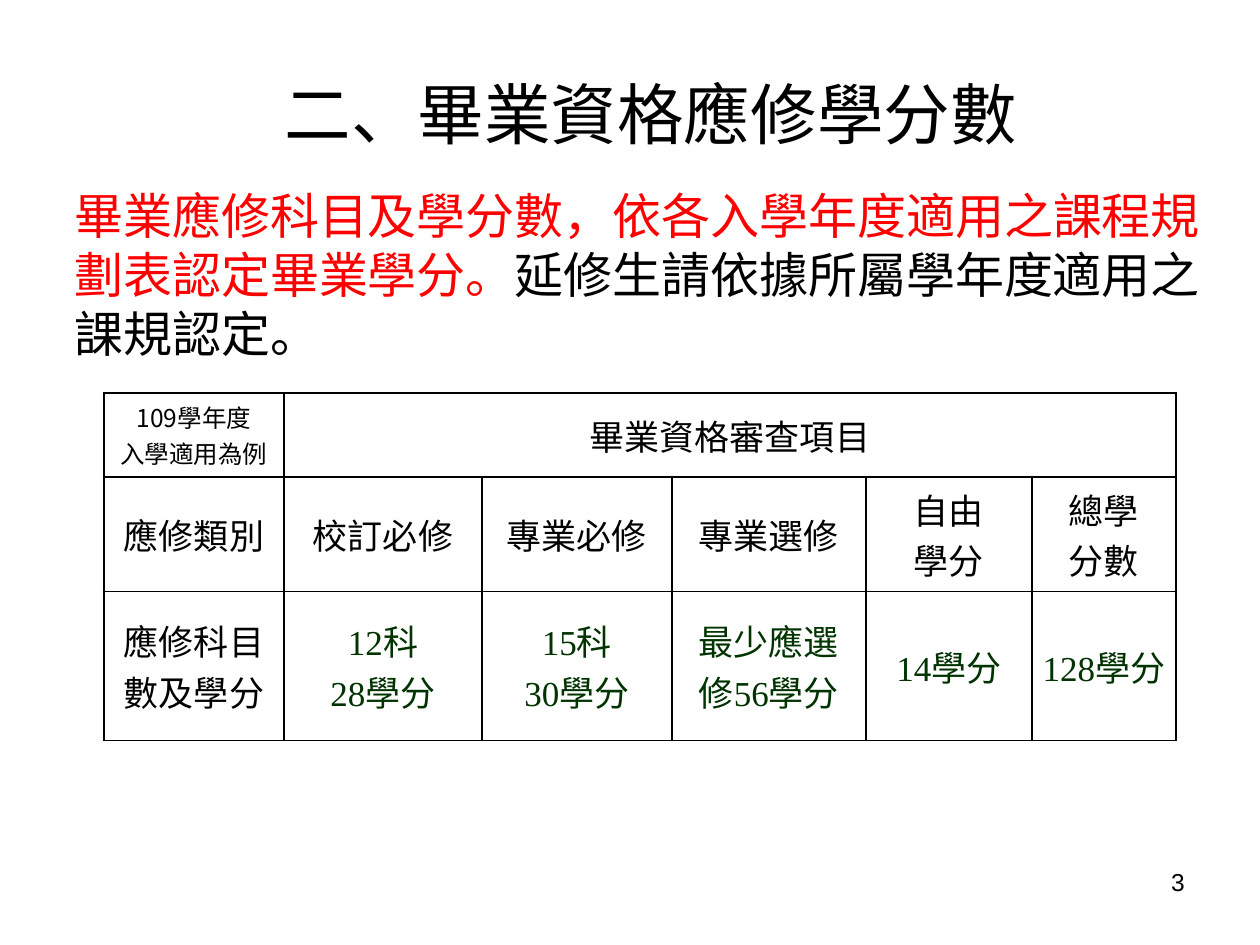
from lxml import etree
from pptx import Presentation
from pptx.dml.color import RGBColor
from pptx.enum.text import MSO_ANCHOR, PP_ALIGN
from pptx.oxml.ns import qn
from pptx.util import Pt

EMU_PER_PX = 914400 / 126
BLACK = RGBColor(0, 0, 0)
WHITE = RGBColor(255, 255, 255)
RED = RGBColor(255, 0, 0)
GREEN = RGBColor(0, 51, 0)
LEFT, CENTER, RIGHT = PP_ALIGN.LEFT, PP_ALIGN.CENTER, PP_ALIGN.RIGHT
TOP, MIDDLE = MSO_ANCHOR.TOP, MSO_ANCHOR.MIDDLE
CJK = "Noto Sans CJK SC"
TITLE_FONT = "Noto Sans CJK JP"
SERIF = "Times New Roman"
SANS = "Arial"

COLUMN_WIDTHS = [180, 198, 190, 194, 166, 144]
ROW_HEIGHTS = [84, 114, 149]
ROWS = [
    [["109學年度", "入學適用為例"], ["畢業資格審查項目"]],
    [["應修類別"], ["校訂必修"], ["專業必修"], ["專業選修"],
     ["自由", "學分"], ["總學", "分數"]],
    [["應修科目數及學分"], ["12科", "28學分"], ["15科", "30學分"],
     ["最少應選修56學分"], ["14學分"], ["128學分"]],
]
NOTE_LINES = [
    [("畢業應修科目及學分數，依各入學年度適用之課程規", RED)],
    [("劃表認定畢業學分。", RED), ("延修生請依據所屬學年度適用之", BLACK)],
    [("課規認定。", BLACK)],
]


def px(length):
    return round(length * EMU_PER_PX)


def place(shape, left, top, width, height):
    shape.left, shape.top = px(left), px(top)
    shape.width, shape.height = px(width), px(height)


def write(frame, lines, size, font, align, spacing=None):
    for index, spans in enumerate(lines):
        para = frame.add_paragraph() if index else frame.paragraphs[0]
        para.alignment = align
        para.space_before = Pt(0)
        if spacing:
            para.line_spacing = Pt(spacing)
        for text, color in spans:
            span = para.add_run()
            span.text = text
            span.font.size = Pt(size)
            span.font.name = font
            span.font.color.rgb = color
            east_asian = etree.SubElement(span.font._element, qn("a:ea"))
            east_asian.set("typeface", CJK if font in (SERIF, SANS) else font)


def add_title(page):
    title = page.shapes.title
    place(title, 84, 45, 1134, 110)
    frame = title.text_frame
    frame.word_wrap = True
    frame.vertical_anchor = MIDDLE
    frame.margin_top, frame.margin_bottom = px(16), px(6)
    write(frame, [[("二、畢業資格應修學分數", BLACK)]], 38, TITLE_FONT, CENTER, 55)


def add_text(page, area, lines, size, font, align, spacing=None, wrap=True, margin_top=6):
    box = page.shapes.add_textbox(0, 0, 0, 0)
    place(box, *area)
    frame = box.text_frame
    frame.word_wrap = wrap
    frame.margin_top = px(margin_top)
    write(frame, lines, size, font, align, spacing)


def set_borders(cell, widths):
    properties = cell._tc.get_or_add_tcPr()
    for index, (side, width) in enumerate(widths.items()):
        line = etree.Element(qn(f"a:ln{side}"), w=str(Pt(width)))
        fill = etree.SubElement(line, qn("a:solidFill"))
        etree.SubElement(fill, qn("a:srgbClr"), val=str(BLACK))
        properties.insert(index, line)


def add_credit_table(page):
    last_row, last_column = len(ROW_HEIGHTS) - 1, len(COLUMN_WIDTHS) - 1
    holder = page.shapes.add_table(
        last_row + 1, last_column + 1, px(104), px(393),
        px(sum(COLUMN_WIDTHS)), px(sum(ROW_HEIGHTS)))
    table = holder.table
    for column, width in zip(table.columns, COLUMN_WIDTHS):
        column.width = px(width)
    for row, height in zip(table.rows, ROW_HEIGHTS):
        row.height = px(height)
    table.cell(0, 1).merge(table.cell(0, last_column))

    for r in range(last_row + 1):
        for c in range(last_column + 1):
            cell = table.cell(r, c)
            cell.fill.solid()
            cell.fill.fore_color.rgb = WHITE
            set_borders(cell, {
                "L": 1.5 if c == 0 else 1,
                "R": 1.5 if c == last_column else 1,
                "T": 1.5 if r == 0 else 1,
                "B": 1,
            })
            if cell.is_spanned:
                continue
            corner = r == c == 0
            cell.vertical_anchor = TOP if corner else MIDDLE
            if c == last_column:
                cell.margin_left = cell.margin_right = 0
                cell.margin_top = cell.margin_bottom = 0
            color = GREEN if r == last_row and c > 0 else BLACK
            font = CJK if corner or ROWS[r][c][0] == "自由" else SERIF
            write(cell.text_frame, [[(text, color)] for text in ROWS[r][c]],
                  14 if corner else 20, font, CENTER)


def main():
    deck = Presentation()
    deck.slide_width, deck.slide_height = px(1260), px(945)
    page = deck.slides.add_slide(deck.slide_layouts[5])
    add_title(page)
    add_credit_table(page)
    add_text(page, (903, 861, 294, 66), [[("3", BLACK)]], 14, SANS, RIGHT)
    add_text(page, (62, 175, 1163, 192), NOTE_LINES, 28, CJK, LEFT,
             spacing=33.5, wrap=False, margin_top=11)
    deck.save("out.pptx")


if __name__ == "__main__":
    main()
